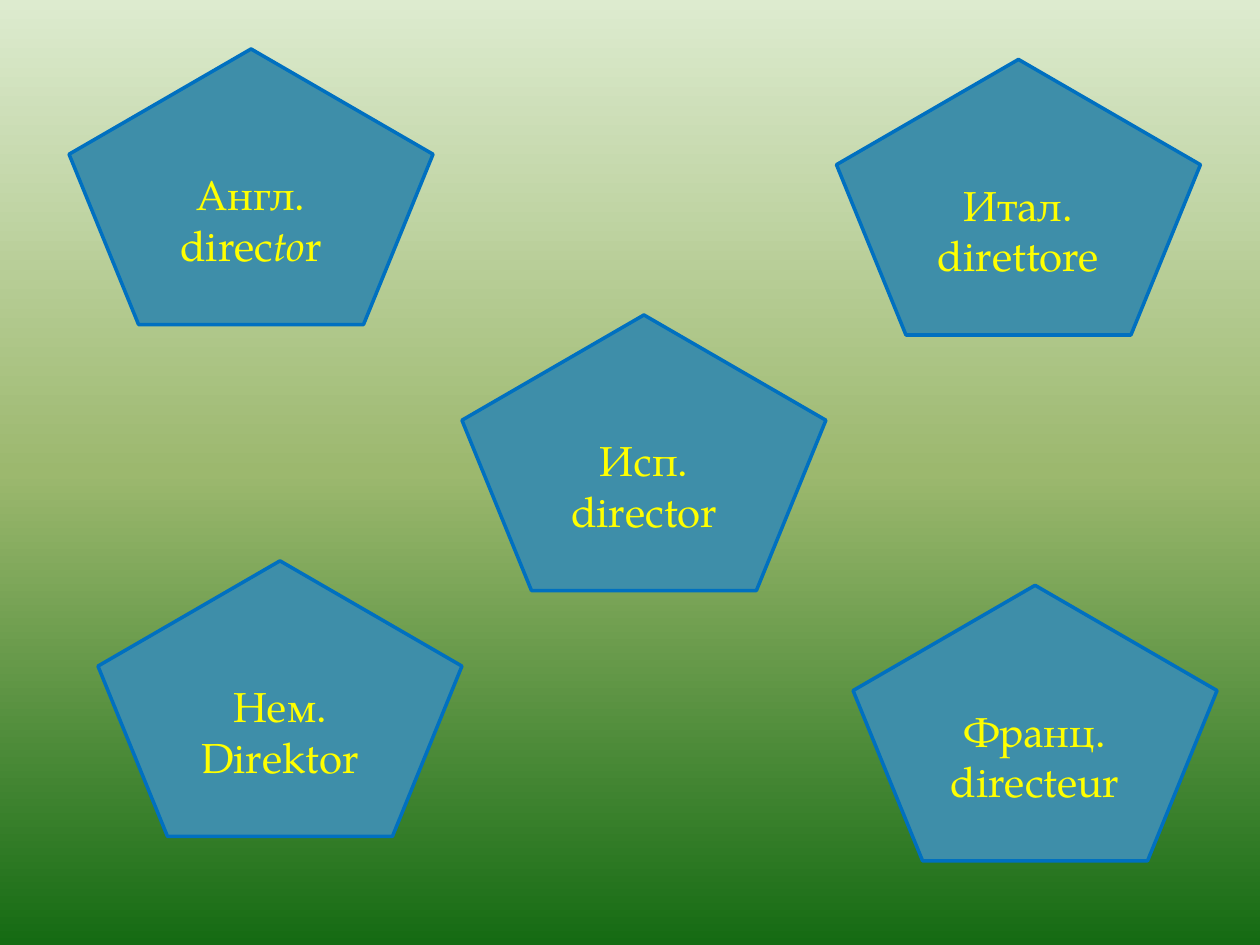
"""Build a slide of pentagons naming the word "director" in five languages."""
from copy import deepcopy

from pptx import Presentation
from pptx.dml.color import RGBColor
from pptx.enum.shapes import MSO_SHAPE as Shape
from pptx.enum.text import MSO_ANCHOR as Anchor, PP_ALIGN as Align
from pptx.oxml.ns import qn
from pptx.util import Pt

WORDS = [
    (478, 34, [("Итал. direttore", False)]),
    (487.5, 334.5, [("Франц. directeur", False)]),
    (56, 320.5, [("Нем. Direktor", False)]),
    (264, 180, [("Исп. director", False)]),
    (39.5, 28, [("Англ. direc", False), ("to", True), ("r", False)]),
]
WIDE, HIGH = 208, 157.5
FONT = "TeX Gyre Pagella"
TEAL = RGBColor(0x3E, 0x8E, 0xA9)
BLUE = RGBColor(0x00, 0x70, 0xC0)
YELLOW = RGBColor(0xFF, 0xFF, 0x00)
PALE = RGBColor(0xDD, 0xEB, 0xCF)
OLIVE = RGBColor(0x9C, 0xB8, 0x6E)
GREEN = RGBColor(0x15, 0x6B, 0x13)
STOPS = [(0, PALE), (0.5, OLIVE), (1, GREEN)]


def paint(slide):
    fill = slide.background.fill
    fill.gradient()
    fill.gradient_angle = 270
    stops = slide.element.find(".//" + qn("a:gsLst"))
    stops.append(deepcopy(stops[-1]))
    for stop, (place, color) in zip(fill.gradient_stops, STOPS):
        stop.position = place
        stop.color.rgb = color


def add_word(slide, left, top, parts):
    shape = slide.shapes.add_shape(
        Shape.REGULAR_PENTAGON, Pt(left), Pt(top), Pt(WIDE), Pt(HIGH))
    shape.shadow.inherit = False
    shape.fill.solid()
    shape.fill.fore_color.rgb = TEAL
    shape.line.color.rgb = BLUE
    shape.line.width = Pt(2)
    frame = shape.text_frame
    frame.word_wrap = True
    frame.vertical_anchor = Anchor.MIDDLE
    para = frame.paragraphs[0]
    para.alignment = Align.CENTER
    para.font.name = FONT
    para.font.size = Pt(24)
    para.font.color.rgb = YELLOW
    for text, slant in parts:
        run = para.add_run()
        run.text = text
        if slant:
            run.font.italic = True


def main():
    deck = Presentation()
    deck.slide_width, deck.slide_height = Pt(720), Pt(540)
    slide = deck.slides.add_slide(deck.slide_layouts[6])
    paint(slide)
    for left, top, parts in WORDS:
        add_word(slide, left, top, parts)
    deck.save("out.pptx")


if __name__ == "__main__":
    main()
